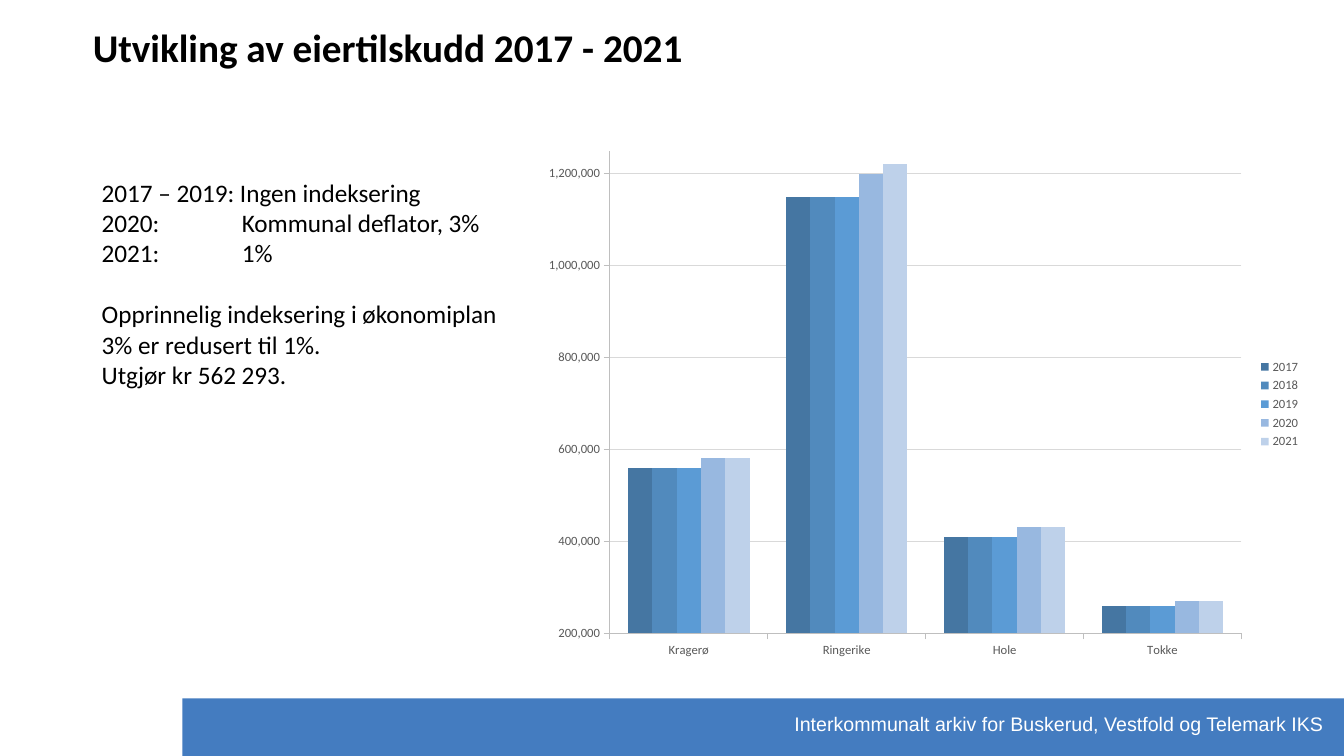
"""Builds the slide on owner contributions 2017 - 2021."""
from dataclasses import dataclass

from lxml import etree
from pptx import Presentation, util as u
from pptx.chart.data import CategoryChartData
from pptx.dml.color import RGBColor
from pptx.enum import chart as charts, shapes, text
from pptx.oxml import ns


@dataclass(frozen=True)
class Theme:
    font: str = "Calibri"
    footer_font: str = "Arial"
    ink: str = "000000"
    white: str = "FFFFFF"
    bar: str = "447CC0"
    label: str = "595959"
    axis: str = "BFBFBF"
    grid: str = "D9D9D9"
    title_size: float = 28
    body_size: float = 18
    footer_size: float = 14
    chart_size: float = 10
    label_size: float = 9
    line_width: float = 0.75


@dataclass(frozen=True)
class Box:
    left: float
    top: float
    width: float
    height: float

    def lengths(self) -> tuple:
        return tuple(u.Inches(n) for n in (self.left, self.top, self.width, self.height))


@dataclass(frozen=True)
class Line:
    text: str
    space_before: float = 0
    tab: float = 0


@dataclass(frozen=True)
class Year:
    name: str
    color: str
    values: tuple


THEME = Theme()
NOTE_TAB = 1.39
NOTES = (
    Line("2017 – 2019: Ingen indeksering"),
    Line("2020:\tKommunal deflator, 3%", tab=NOTE_TAB),
    Line("2021:\t1%", tab=NOTE_TAB),
    Line("Opprinnelig indeksering i økonomiplan 3% er redusert til 1%.", space_before=22),
    Line("Utgjør kr 562 293."),
)
MUNICIPALITIES = ("Kragerø", "Ringerike", "Hole", "Tokke")
UNINDEXED = (560000, 1150000, 410000, 260000)
YEARS = (
    Year("2017", "4576A2", UNINDEXED),
    Year("2018", "518ABD", UNINDEXED),
    Year("2019", "5B9BD5", UNINDEXED),
    Year("2020", "98B8E0", (580000, 1200000, 430000, 270000)),
    Year("2021", "BED1EA", (580000, 1220000, 430000, 270000)),
)


def format_font(font, size: float, color: str, name: str = THEME.font, bold: bool = False) -> None:
    font.name, font.size, font.bold = name, u.Pt(size), bold
    font.color.rgb = RGBColor.from_string(color)


def write_text(shape, lines: tuple, *, size: float, color: str = THEME.ink,
               font: str = THEME.font, bold: bool = False, wrap: bool = True) -> None:
    frame = shape.text_frame
    frame.word_wrap = wrap
    frame.auto_size = text.MSO_AUTO_SIZE.SHAPE_TO_FIT_TEXT
    frame.vertical_anchor = text.MSO_ANCHOR.TOP
    for index, line in enumerate(lines):
        paragraph = frame.add_paragraph() if index else frame.paragraphs[0]
        paragraph.alignment = text.PP_ALIGN.LEFT
        if line.tab:
            properties = paragraph._p.get_or_add_pPr()
            tabs = etree.SubElement(properties, ns.qn("a:tabLst"))
            etree.SubElement(tabs, ns.qn("a:tab"), pos=str(u.Inches(line.tab)), algn="l")
        if line.space_before:
            paragraph.space_before = u.Pt(line.space_before)
        run = paragraph.add_run()
        run.text = line.text
        format_font(run.font, size, color, font, bold)


def add_footer(slide) -> None:
    bar = slide.shapes.add_shape(shapes.MSO_SHAPE.RECTANGLE, *Box(1.81, 6.93, 11.59, 0.63).lengths())
    bar.shadow.inherit = False
    bar.fill.solid()
    bar.fill.fore_color.rgb = RGBColor.from_string(THEME.bar)
    bar.line.fill.background()
    label = slide.shapes.add_textbox(*Box(7.78, 7.01, 5.48, 0.34).lengths())
    write_text(label, (Line("Interkommunalt arkiv for Buskerud, Vestfold og Telemark IKS"),),
               size=THEME.footer_size, color=THEME.white, font=THEME.footer_font, wrap=False)


def format_line(line, color: str) -> None:
    line.color.rgb = RGBColor.from_string(color)
    line.width = u.Pt(THEME.line_width)


def add_contribution_chart(slide, box: Box) -> None:
    data = CategoryChartData(number_format="#,##0")
    data.categories = MUNICIPALITIES
    for year in YEARS:
        data.add_series(year.name, year.values)
    chart = slide.shapes.add_chart(charts.XL_CHART_TYPE.COLUMN_CLUSTERED, *box.lengths(), data).chart
    chart.has_title = False
    format_font(chart.font, THEME.chart_size, THEME.ink)
    chart.has_legend = True
    chart.legend.position = charts.XL_LEGEND_POSITION.RIGHT
    chart.legend.include_in_layout = False
    format_font(chart.legend.font, THEME.label_size, THEME.label)

    plot = chart.plots[0]
    plot.gap_width, plot.overlap, plot.vary_by_categories = 150, 0, False
    for series, year in zip(plot.series, YEARS):
        series.format.fill.solid()
        series.format.fill.fore_color.rgb = RGBColor.from_string(year.color)

    for axis in (chart.category_axis, chart.value_axis):
        axis.major_tick_mark = charts.XL_TICK_MARK.OUTSIDE
        format_font(axis.tick_labels.font, THEME.label_size, THEME.label)
        format_line(axis.format.line, THEME.axis)
    amounts = chart.value_axis
    amounts.minimum_scale, amounts.maximum_scale, amounts.major_unit = 200000, 1250000, 200000
    amounts.tick_labels.number_format = "#,##0"
    amounts.tick_labels.number_format_is_linked = False
    amounts.has_major_gridlines = True
    format_line(amounts.major_gridlines.format.line, THEME.grid)


def main() -> None:
    presentation = Presentation()
    presentation.slide_width, presentation.slide_height = u.Inches(13.33), u.Inches(7.5)
    slide = presentation.slides.add_slide(presentation.slide_layouts[5])
    add_footer(slide)
    title = slide.shapes.title
    title.left, title.top, title.width, title.height = Box(0.82, 0.18, 12.18, 0.57).lengths()
    write_text(title, (Line("Utvikling av eiertilskudd 2017 - 2021"),), size=THEME.title_size, bold=True)
    notes = slide.shapes.add_textbox(*Box(0.91, 1.71, 4.15, 3.13).lengths())
    write_text(notes, NOTES, size=THEME.body_size)
    add_contribution_chart(slide, Box(5.29, 1.39, 7.71, 5.24))
    presentation.save("out.pptx")


if __name__ == "__main__":
    main()
